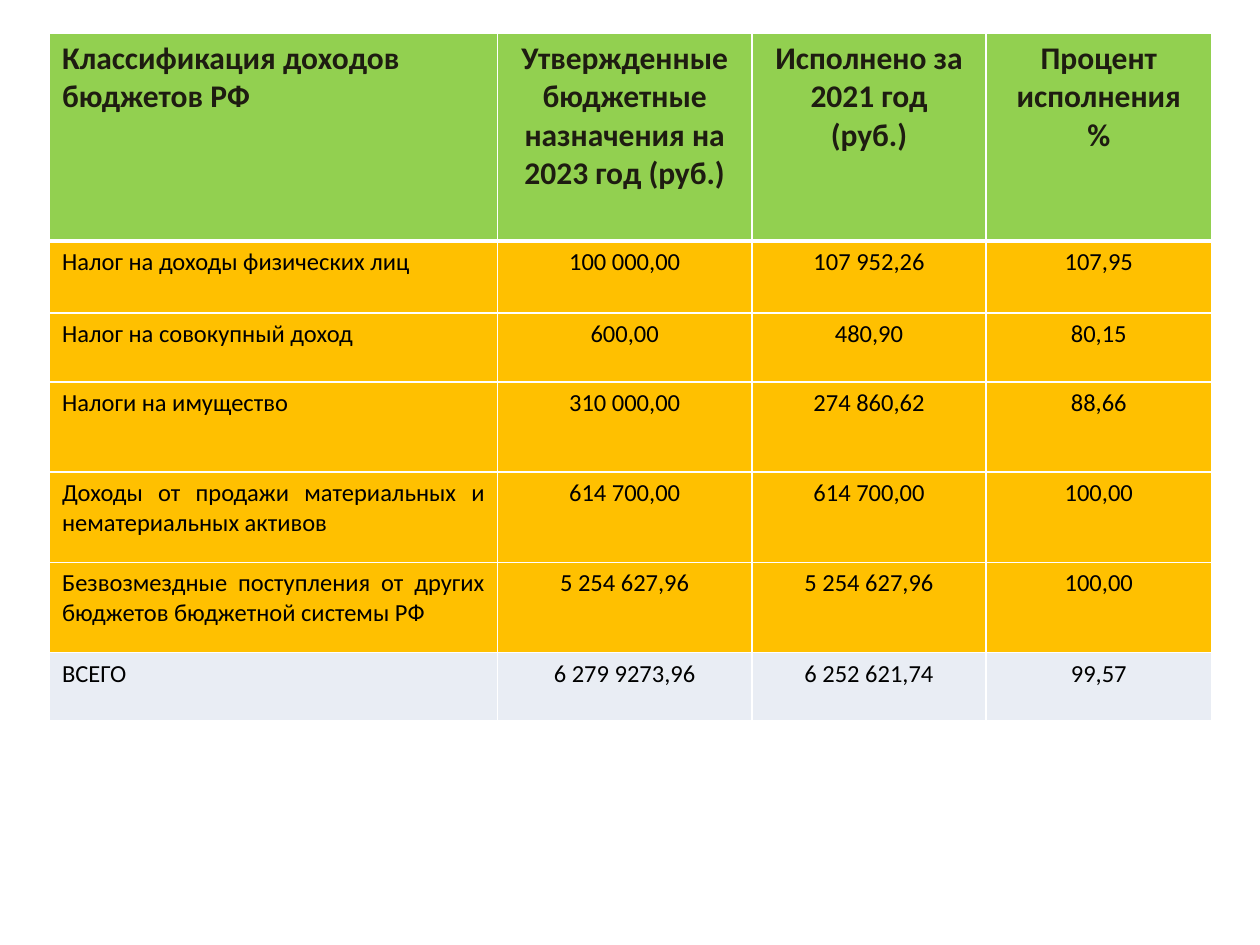
"""Build a slide with a table of budget revenue execution."""
from dataclasses import dataclass

from lxml import etree
from pptx import Presentation
from pptx.dml.color import RGBColor
from pptx.enum import text
from pptx.oxml import ns
from pptx.util import Pt

WHITE = RGBColor(0xFF, 0xFF, 0xFF)
BLACK = RGBColor(0x00, 0x00, 0x00)
DARK = RGBColor(0x1E, 0x1C, 0x11)
GREEN = RGBColor(0x92, 0xD0, 0x50)
AMBER = RGBColor(0xFF, 0xC0, 0x00)
PALE = RGBColor(0xE9, 0xED, 0xF4)

LEFT, CENTER, JUSTIFY = text.PP_ALIGN.LEFT, text.PP_ALIGN.CENTER, text.PP_ALIGN.JUSTIFY


@dataclass(frozen=True)
class RowStyle:
    fill: RGBColor
    color: RGBColor = BLACK
    size: float = 14
    bold: bool = False
    label_align: text.PP_ALIGN = JUSTIFY
    bottom: float = 1


@dataclass(frozen=True)
class Row:
    height: float
    cells: tuple[str, ...]
    style: RowStyle


HEADER = RowStyle(GREEN, DARK, 18, True, LEFT, 3)
INCOME = RowStyle(AMBER)
TOTAL = RowStyle(PALE)

COLUMNS = (256, 145.4, 133.9, 128.7)
ROWS = (
    Row(118.8, ("Классификация доходов бюджетов РФ",
                "Утвержденные бюджетные назначения на 2023 год (руб.)",
                "Исполнено за 2021 год\n(руб.)",
                "Процент исполнения\n%"), HEADER),
    Row(41, ("Налог на доходы физических лиц",
             "100 000,00", "107 952,26", "107,95"), INCOME),
    Row(39.4, ("Налог на совокупный доход",
               "600,00", "480,90", "80,15"), INCOME),
    Row(51.6, ("Налоги на имущество",
               "310 000,00", "274 860,62", "88,66"), INCOME),
    Row(51.6, ("Доходы от продажи материальных и нематериальных активов",
               "614 700,00", "614 700,00", "100,00"), INCOME),
    Row(51.6, ("Безвозмездные поступления от других бюджетов бюджетной системы РФ",
               "5 254 627,96", "5 254 627,96", "100,00"), INCOME),
    Row(39, ("ВСЕГО", "6 279 9273,96", "6 252 621,74", "99,57"), TOTAL),
)


def set_borders(cell, top: float, bottom: float) -> None:
    tc_pr = cell._tc.get_or_add_tcPr()
    for side, width in (("L", 1), ("R", 1), ("T", top), ("B", bottom)):
        ln = etree.SubElement(tc_pr, ns.qn(f"a:ln{side}"), w=str(Pt(width)))
        fill = etree.SubElement(ln, ns.qn("a:solidFill"))
        etree.SubElement(fill, ns.qn("a:srgbClr"), val=str(WHITE))


def fill_cell(cell, value: str, align: text.PP_ALIGN, style: RowStyle, top: float) -> None:
    set_borders(cell, top, style.bottom)
    cell.fill.solid()
    cell.fill.fore_color.rgb = style.fill
    tf = cell.text_frame
    tf.text = value
    for p in tf.paragraphs:
        p.alignment = align
        for r in p.runs:
            r.font.name = "Calibri"
            r.font.size = Pt(style.size)
            r.font.bold = style.bold
            r.font.color.rgb = style.color


def add_budget_table(s, left: float, top: float) -> None:
    width, height = sum(COLUMNS), sum(row.height for row in ROWS)
    table = s.shapes.add_table(len(ROWS), len(COLUMNS), Pt(left), Pt(top),
                               Pt(width), Pt(height)).table
    for column, column_width in zip(table.columns, COLUMNS):
        column.width = Pt(column_width)
    edge = 1
    for i, row in enumerate(ROWS):
        table.rows[i].height = Pt(row.height)
        for j, value in enumerate(row.cells):
            align = CENTER if j else row.style.label_align
            fill_cell(table.cell(i, j), value, align, row.style, edge)
        edge = row.style.bottom


def main() -> None:
    prs = Presentation()
    prs.slide_width, prs.slide_height = Pt(720), Pt(540)
    s = prs.slides.add_slide(prs.slide_layouts[6])
    add_budget_table(s, 28.3, 19)
    prs.save("out.pptx")


if __name__ == "__main__":
    main()
